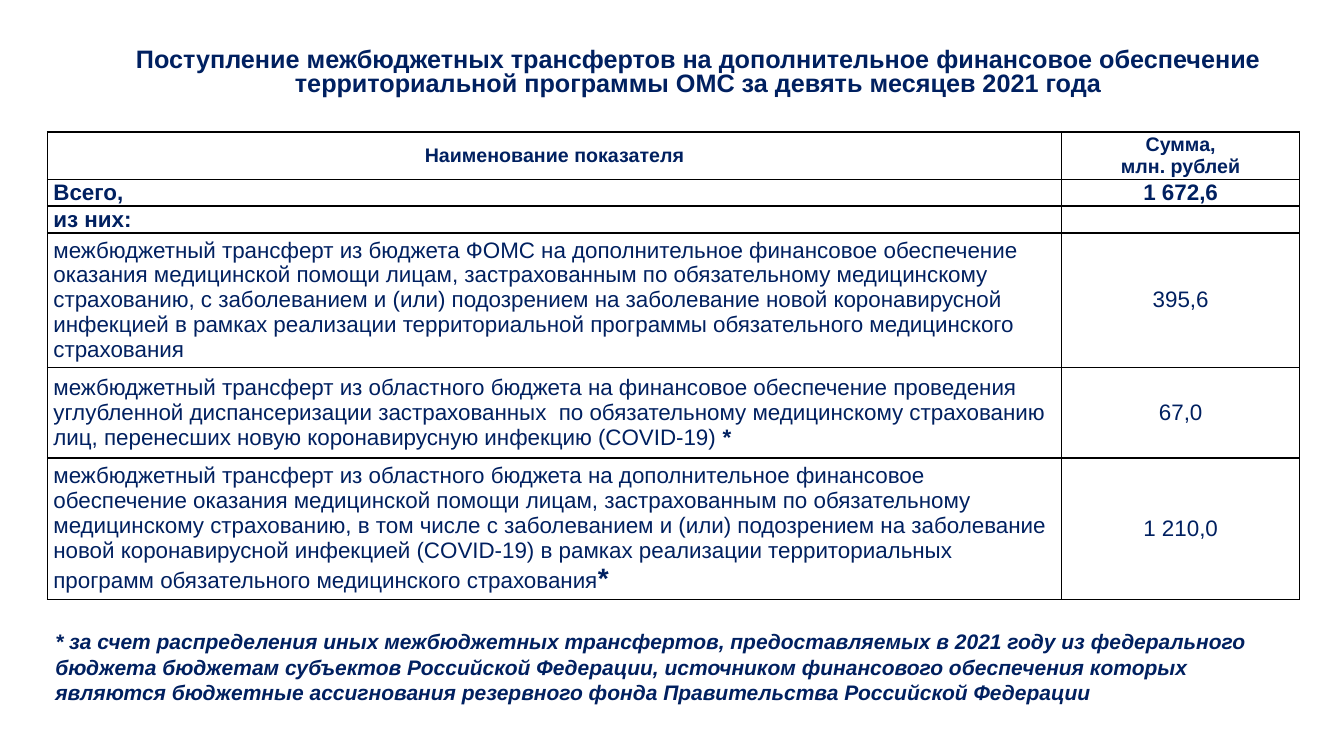
from lxml.etree import SubElement
from pptx import Presentation
from pptx.dml.color import RGBColor
from pptx.enum.text import MSO_ANCHOR, PP_ALIGN
from pptx.oxml.ns import qn
from pptx.util import Inches, Pt

NAVY = "002060"
BLACK = "000000"
TITLE = ("Поступление межбюджетных трансфертов на дополнительное финансовое обеспечение "
         "территориальной программы ОМС за девять месяцев 2021 года")
FOOTNOTE = ("* за счет распределения иных межбюджетных трансфертов, предоставляемых в 2021 году "
            "из федерального бюджета бюджетам субъектов Российской Федерации, источником "
            "финансового обеспечения которых являются бюджетные ассигнования резервного фонда "
            "Правительства Российской Федерации")
COLUMN_WIDTHS = (10.06, 2.36)
# Each row: height, name, amount, text size, bold, footnote mark, mark size
ROWS = [
    (0.43, "Наименование показателя", "Сумма,\vмлн. рублей", 14, True, "", 14),
    (0.25, "Всего,", "1 672,6", 16, True, "", 16),
    (0.25, "из них:", "", 16, True, "", 16),
    (1.24, "межбюджетный трансферт из бюджета ФОМС на дополнительное финансовое обеспечение "
           "оказания медицинской помощи лицам, застрахованным по обязательному медицинскому "
           "страхованию, с заболеванием и (или) подозрением на заболевание новой коронавирусной "
           "инфекцией в рамках реализации территориальной программы обязательного медицинского "
           "страхования", "395,6", 16, False, "", 16),
    (0.9, "межбюджетный трансферт из областного бюджета на финансовое обеспечение проведения "
          "углубленной диспансеризации застрахованных  по обязательному медицинскому страхованию "
          "лиц, перенесших новую коронавирусную инфекцию (COVID-19)", "67,0", 16, False, " *", 16),
    (1.3, "межбюджетный трансферт из областного бюджета на дополнительное финансовое "
          "обеспечение оказания медицинской помощи лицам, застрахованным по обязательному "
          "медицинскому страхованию, в том числе с заболеванием и (или) подозрением на заболевание "
          "новой коронавирусной инфекцией (COVID-19) в рамках реализации территориальных "
          "программ обязательного медицинского страхования", "1 210,0", 16, False, "*", 20),
]


def color(value):
    """Turn a hex string into a colour."""
    return RGBColor.from_string(value)


def style(paragraph, size, bold, italic=False, align=PP_ALIGN.LEFT):
    """Set the alignment and font of a paragraph."""
    paragraph.alignment = align
    font = paragraph.font
    font.name, font.size, font.bold, font.italic = "Arial", Pt(size), bold, italic
    font.color.rgb = color(NAVY)


def add_text(slide, box, text, size, italic=False, align=PP_ALIGN.LEFT,
             anchor=MSO_ANCHOR.TOP, spacing=1.0):
    """Place a bold wrapped text in a box."""
    frame = slide.shapes.add_textbox(*map(Inches, box)).text_frame
    frame.word_wrap = True
    frame.vertical_anchor = anchor
    paragraph = frame.paragraphs[0]
    paragraph.text = text
    paragraph.line_spacing = spacing
    style(paragraph, size, True, italic, align)


def add_borders(cell):
    """Draw a thin black line on every side of a cell."""
    properties = cell._tc.get_or_add_tcPr()
    for index, side in enumerate(("a:lnL", "a:lnR", "a:lnT", "a:lnB")):
        line = properties.makeelement(qn(side), {"w": str(Pt(1))})
        properties.insert(index, line)
        fill = SubElement(line, qn("a:solidFill"))
        SubElement(fill, qn("a:srgbClr"), val=BLACK)


def fill_cell(cell, text, size, bold, align):
    """Write one table cell and return its paragraph."""
    cell.margin_left = cell.margin_right = Inches(0.06)
    cell.margin_top = cell.margin_bottom = 0
    cell.vertical_anchor = MSO_ANCHOR.MIDDLE
    cell.fill.background()
    add_borders(cell)
    paragraph = cell.text_frame.paragraphs[0]
    paragraph.text = text
    style(paragraph, size, bold, align=align)
    return paragraph


def add_transfers(slide, left, top):
    """Build the table of transfers at the given corner."""
    width, height = sum(COLUMN_WIDTHS), sum(row[0] for row in ROWS)
    table = slide.shapes.add_table(len(ROWS), len(COLUMN_WIDTHS),
                                   *map(Inches, (left, top, width, height))).table
    table.first_row = table.horz_banding = False
    for column, column_width in zip(table.columns, COLUMN_WIDTHS):
        column.width = Inches(column_width)
    for index, (row_height, name, amount, size, bold, mark, mark_size) in enumerate(ROWS):
        table.rows[index].height = Inches(row_height)
        name_align = PP_ALIGN.LEFT if index else PP_ALIGN.CENTER
        paragraph = fill_cell(table.cell(index, 0), name, size, bold, name_align)
        if mark:
            run = paragraph.add_run()
            run.text = mark
            run.font.bold, run.font.size = True, Pt(mark_size)
        fill_cell(table.cell(index, 1), amount, size, bold, PP_ALIGN.CENTER)


def main():
    """Build and save the presentation."""
    presentation = Presentation()
    presentation.slide_width, presentation.slide_height = Inches(13.33), Inches(7.5)
    slide = presentation.slides.add_slide(presentation.slide_layouts[6])
    add_text(slide, (0.89, 0.45, 12.07, 0.55), TITLE, 18, align=PP_ALIGN.CENTER,
             anchor=MSO_ANCHOR.MIDDLE, spacing=0.8)
    add_transfers(slide, 0.47, 1.31)
    add_text(slide, (0.45, 6.19, 12.28, 0.86), FOOTNOTE, 15, italic=True)
    presentation.save("out.pptx")


if __name__ == "__main__":
    main()
